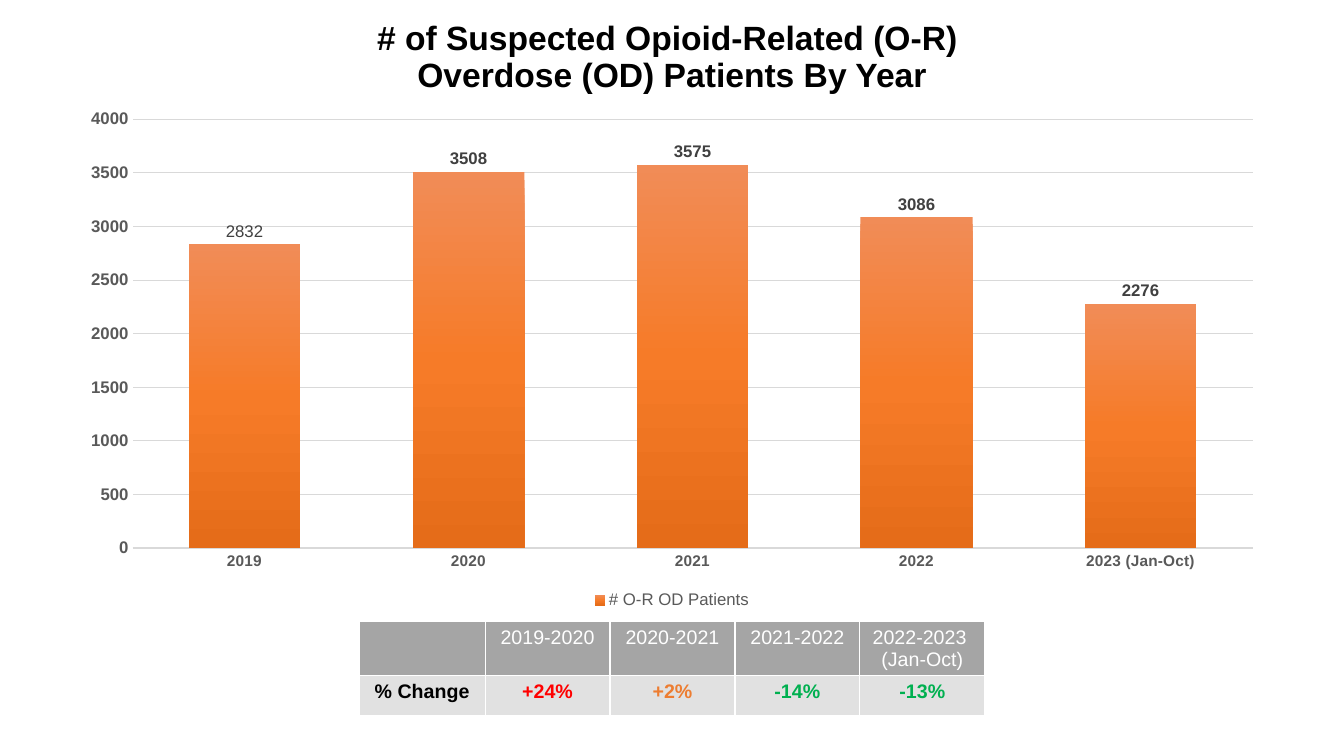
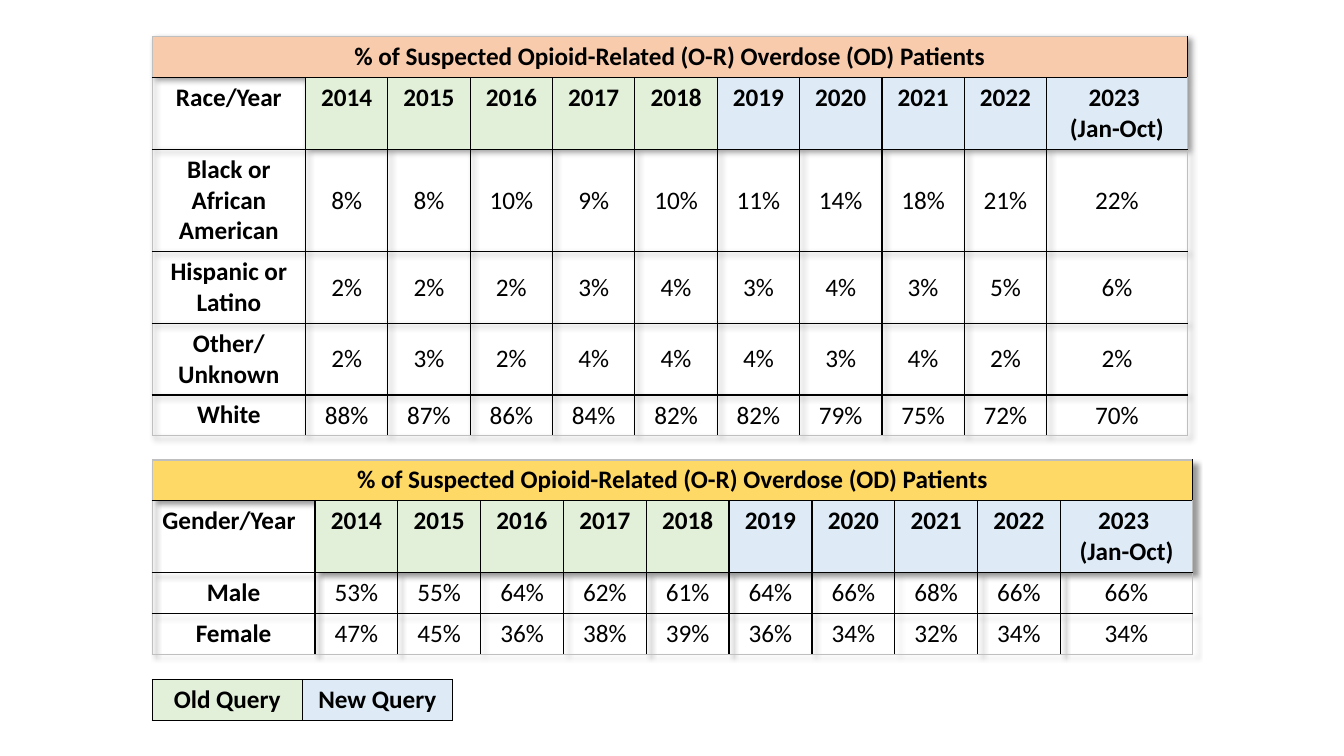
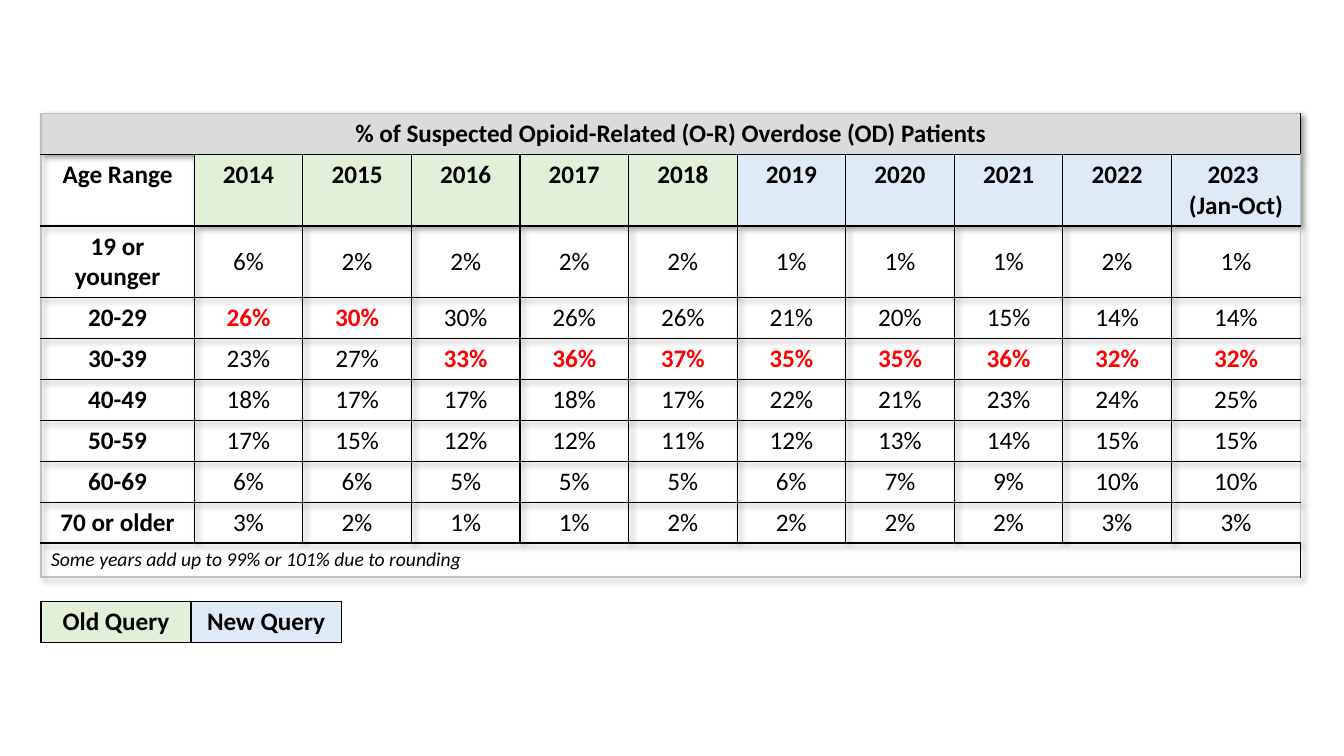
from lxml import etree
from pptx import Presentation
from pptx.chart.data import CategoryChartData
from pptx.dml.color import RGBColor
from pptx.enum.chart import XL_CHART_TYPE, XL_LABEL_POSITION, XL_LEGEND_POSITION, XL_TICK_MARK
from pptx.enum.text import MSO_ANCHOR, MSO_AUTO_SIZE, PP_ALIGN
from pptx.oxml import parse_xml
from pptx.oxml.ns import nsdecls, qn
from pptx.util import Pt

PX = 9525
BLACK = RGBColor(0x00, 0x00, 0x00)
WHITE = RGBColor(0xFF, 0xFF, 0xFF)
RED = RGBColor(0xFF, 0x00, 0x00)
ORANGE = RGBColor(0xED, 0x7D, 0x31)
GREEN = RGBColor(0x00, 0xB0, 0x50)
AXIS_TEXT = RGBColor(0x59, 0x59, 0x59)
LABEL_TEXT = RGBColor(0x40, 0x40, 0x40)
GRID_LINE = RGBColor(0xD9, 0xD9, 0xD9)
OUTER_EDGE = RGBColor(0xBF, 0xBF, 0xBF)
CHANGE_HEAD = RGBColor(0xA5, 0xA5, 0xA5)
CHANGE_BODY = RGBColor(0xE1, 0xE1, 0xE1)
RACE_BAND = RGBColor(0xF8, 0xCB, 0xAD)
GENDER_BAND = RGBColor(0xFF, 0xD9, 0x66)
AGE_BAND = RGBColor(0xDB, 0xDB, 0xDB)
OLD_QUERY = RGBColor(0xE2, 0xF0, 0xD9)
NEW_QUERY = RGBColor(0xDE, 0xEB, 0xF7)
NO_STYLE = "{2D5ABB26-0587-4C30-8999-92F81FD0307C}"


def add_plain_table(page, left, top, widths, heights):
    """Add an unstyled table; widths are in EMU, all other lengths in px."""
    frame = page.shapes.add_table(len(heights), len(widths), left * PX, top * PX,
                                  sum(widths), sum(heights) * PX)
    table = frame.table
    table.first_row = table.horz_banding = False
    table._tbl.tblPr.find(qn("a:tableStyleId")).text = NO_STYLE
    for column, width in zip(table.columns, widths):
        column.width = width
    for row, height in zip(table.rows, heights):
        row.height = height * PX
    return table


def format_cell(cell, text, fill=None, font="Calibri", size=18, colour=BLACK, bold=True,
                italic=False, align=PP_ALIGN.CENTER, anchor=MSO_ANCHOR.TOP, edges=(BLACK,) * 4):
    """Write one cell; edges are the left, right, top and bottom colours."""
    properties = cell._tc.get_or_add_tcPr()
    for side, edge in zip("LRTB", edges):
        properties.append(parse_xml(
            f'<a:ln{side} {nsdecls("a")} w="12700"><a:solidFill>'
            f'<a:srgbClr val="{edge}"/></a:solidFill></a:ln{side}>'))
    if fill is None:
        cell.fill.background()
    else:
        cell.fill.solid()
        cell.fill.fore_color.rgb = fill
    cell.vertical_anchor = anchor
    cell.text_frame.text = text
    for para in cell.text_frame.paragraphs:
        para.alignment = align
        para.font.size = Pt(size)
        for span in para.runs:
            span.font.name = font
            span.font.size = Pt(size)
            span.font.bold = bold
            span.font.italic = italic
            span.font.color.rgb = colour


deck = Presentation()
deck.slide_width = 1280 * PX
deck.slide_height = 720 * PX
title_only, blank = deck.slide_layouts[5], deck.slide_layouts[6]

# Patients by year
page = deck.slides.add_slide(title_only)
title = page.shapes.title
title.left, title.top, title.width, title.height = 64 * PX, 16 * PX, 1152 * PX, 99 * PX
title.text_frame.text = "# of Suspected Opioid-Related (O-R) \vOverdose (OD) Patients By Year"
title.text_frame.auto_size = MSO_AUTO_SIZE.NONE
title.text_frame.vertical_anchor = MSO_ANCHOR.TOP
para = title.text_frame.paragraphs[0]
para.alignment = PP_ALIGN.CENTER
para.line_spacing = 0.9
for span in para.runs:
    span.font.name = "Arial"
    span.font.size = Pt(24)
    span.font.bold = True
    span.font.color.rgb = BLACK

data = CategoryChartData()
data.categories = ["2019", "2020", "2021", "2022", "2023 (Jan-Oct)"]
data.add_series("# O-R OD Patients", [2832, 3508, 3575, 3086, 2276])
chart = page.shapes.add_chart(XL_CHART_TYPE.COLUMN_CLUSTERED, 64 * PX, 96 * PX,
                              1152 * PX, 488 * PX, data).chart
chart.has_title = False
chart.has_legend = True
chart.legend.position = XL_LEGEND_POSITION.BOTTOM
chart.legend.include_in_layout = False
plot = chart.plots[0]
plot.gap_width = 100
plot.overlap = -24
plot.vary_by_categories = False
columns = plot.series[0]
columns.format.fill.solid()
solid = columns._element.spPr.find(qn("a:solidFill"))
stops = "".join(f'<a:gs pos="{pos}"><a:srgbClr val="{stop}"/></a:gs>' for pos, stop in
                ((0, "F18C57"), (50000, "F67B28"), (100000, "E56C19")))
columns._element.spPr.replace(solid, parse_xml(
    f'<a:gradFill {nsdecls("a")} rotWithShape="1"><a:gsLst>{stops}</a:gsLst>'
    '<a:lin ang="5400000" scaled="0"/></a:gradFill>'))

labels = columns.data_labels
labels.show_value = True
labels.position = XL_LABEL_POSITION.OUTSIDE_END
first_label = columns.points[0].data_label
first_label.position = XL_LABEL_POSITION.OUTSIDE_END
category_axis, value_axis = chart.category_axis, chart.value_axis
for font, size, colour, bold in (
        (category_axis.tick_labels.font, 11, AXIS_TEXT, True),
        (value_axis.tick_labels.font, 12, AXIS_TEXT, True),
        (chart.legend.font, 12, AXIS_TEXT, False),
        (labels.font, 12, LABEL_TEXT, True),
        (first_label.font, 12, LABEL_TEXT, False)):
    font.name = "Arial"
    font.size = Pt(size)
    font.color.rgb = colour
    font.bold = bold
for axis in (category_axis, value_axis):
    axis.major_tick_mark = axis.minor_tick_mark = XL_TICK_MARK.NONE
category_axis.format.line.color.rgb = GRID_LINE
category_axis.format.line.width = Pt(1)
value_axis.format.line.fill.background()
value_axis.minimum_scale, value_axis.maximum_scale, value_axis.major_unit = 0, 4000, 500
value_axis.major_gridlines.format.line.color.rgb = GRID_LINE
value_axis.major_gridlines.format.line.width = Pt(0.75)

plot_area = chart._chartSpace.chart.plotArea
for old_layout in plot_area.findall(qn("c:layout")):
    plot_area.remove(old_layout)
layout = parse_xml(f'<c:layout {nsdecls("c")}><c:manualLayout/></c:layout>')
for tag, value in (("layoutTarget", "inner"), ("xMode", "edge"), ("yMode", "edge"),
                   ("x", "0.054"), ("y", "0.036"), ("w", "0.926"), ("h", "0.837")):
    etree.SubElement(layout[0], qn(f"c:{tag}")).set("val", value)
plot_area.insert(0, layout)

changes = [("", "% Change", BLACK), ("2019-2020", "+24%", RED), ("2020-2021", "+2%", ORANGE),
           ("2021-2022", "-14%", GREEN), ("2022-2023 \n(Jan-Oct)", "-13%", GREEN)]
table = add_plain_table(page, 342, 592, [120 * PX] + [119 * PX] * 4, [51, 38])
for index, (period, change, colour) in enumerate(changes):
    format_cell(table.cell(0, index), period, CHANGE_HEAD, "Arial", 14, WHITE, False,
                edges=(WHITE,) * 4)
    format_cell(table.cell(1, index), change, CHANGE_BODY, "Arial", 14, colour,
                edges=(WHITE,) * 4)

# Patients by race, gender and age
race_rows = [
    ("Black or African American", 3, (8, 8, 10, 9, 10, 11, 14, 18, 21, 22)),
    ("Hispanic or Latino", 2, (2, 2, 2, 3, 4, 3, 4, 3, 5, 6)),
    ("Other/\nUnknown", 2, (2, 3, 2, 4, 4, 4, 3, 4, 2, 2)),
    ("White", 1, (88, 87, 86, 84, 82, 82, 79, 75, 72, 70)),
]
gender_rows = [
    ("Male", 1, (53, 55, 64, 62, 61, 64, 66, 68, 66, 66)),
    ("Female", 1, (47, 45, 36, 38, 39, 36, 34, 32, 34, 34)),
]
age_rows = [
    ("19 or younger", 2, (6, 2, 2, 2, 2, 1, 1, 1, 2, 1)),
    ("20-29", 1, (26, 30, 30, 26, 26, 21, 20, 15, 14, 14)),
    ("30-39", 1, (23, 27, 33, 36, 37, 35, 35, 36, 32, 32)),
    ("40-49", 1, (18, 17, 17, 18, 17, 22, 21, 23, 24, 25)),
    ("50-59", 1, (17, 15, 12, 12, 11, 12, 13, 14, 15, 15)),
    ("60-69", 1, (6, 6, 5, 5, 5, 6, 7, 9, 10, 10)),
    ("70 or older", 1, (3, 2, 1, 1, 2, 2, 2, 2, 3, 3)),
]
years = [str(year) for year in range(2014, 2023)] + ["2023 \n(Jan-Oct)"]
query_page, age_page = deck.slides.add_slide(blank), deck.slides.add_slide(blank)
age_note = "Some years add up to 99% or 101% due to rounding"

for page, left, top, width, first, last, band, heading, groups, note in (
        (query_page, 145, 35, 986, 146, 134, RACE_BAND, "Race/Year", race_rows, None),
        (query_page, 145, 438, 991, 155, 126, GENDER_BAND, "Gender/Year", gender_rows, None),
        (age_page, 39, 108, 1200, 146, 123, AGE_BAND, "Age Range", age_rows, age_note)):
    year_width = (width - first - last) * PX // 9
    widths = [first * PX] + [year_width] * 9 + [last * PX]
    line_counts = [1, 2] + [lines for _, lines, _ in groups]
    heights = [10 + 29 * lines for lines in line_counts] + ([32] if note else [])
    table = add_plain_table(page, left, top, widths, heights)
    table._tbl.tblPr.insert(0, parse_xml(
        f'<a:effectLst {nsdecls("a")}><a:outerShdw blurRad="50800" dist="38100" dir="2700000" '
        'algn="tl" rotWithShape="0"><a:prstClr val="black"><a:alpha val="40000"/></a:prstClr>'
        '</a:outerShdw></a:effectLst>'))

    grid = [["% of Suspected Opioid-Related (O-R) Overdose (OD) Patients"] + [""] * 10,
            [heading] + years]
    grid += [[label] + [f"{value}%" for value in values] for label, _, values in groups]
    if note:
        grid.append([note] + [""] * 10)
    peaks = [max(column) for column in zip(*(values for _, _, values in groups))]
    bottom = len(grid) - 1
    for r, texts in enumerate(grid):
        for c, text in enumerate(texts):
            look = {"edges": (OUTER_EDGE if c == 0 else BLACK, OUTER_EDGE if c == 10 else BLACK,
                              OUTER_EDGE if r == 0 else BLACK, OUTER_EDGE if r == bottom else BLACK)}
            if r == 0:
                look["fill"] = band
            elif r == 1 and c > 0:
                look["fill"] = OLD_QUERY if c <= 5 else NEW_QUERY
            elif r == 1 and heading == "Gender/Year":
                look["align"] = PP_ALIGN.LEFT
            elif note and r == bottom:
                look.update(size=14, bold=False, italic=True, align=PP_ALIGN.LEFT)
            elif r > 1 and c > 0:
                is_peak = bool(note) and groups[r - 2][2][c - 1] == peaks[c - 1]
                # In 2015 and later, ties do not occur within a column
                look.update(anchor=MSO_ANCHOR.MIDDLE, bold=is_peak,
                            colour=RED if is_peak else BLACK)
            format_cell(table.cell(r, c), text, **look)
    for r in [0, bottom] if note else [0]:
        table.cell(r, 0).merge(table.cell(r, 10))

# Key to the two queries
for page, left, top in ((query_page, 145, 647), (age_page, 39, 573)):
    table = add_plain_table(page, left, top, [143 * PX] * 2, [39])
    format_cell(table.cell(0, 0), "Old Query", OLD_QUERY)
    format_cell(table.cell(0, 1), "New Query", NEW_QUERY)

deck.save("out.pptx")
